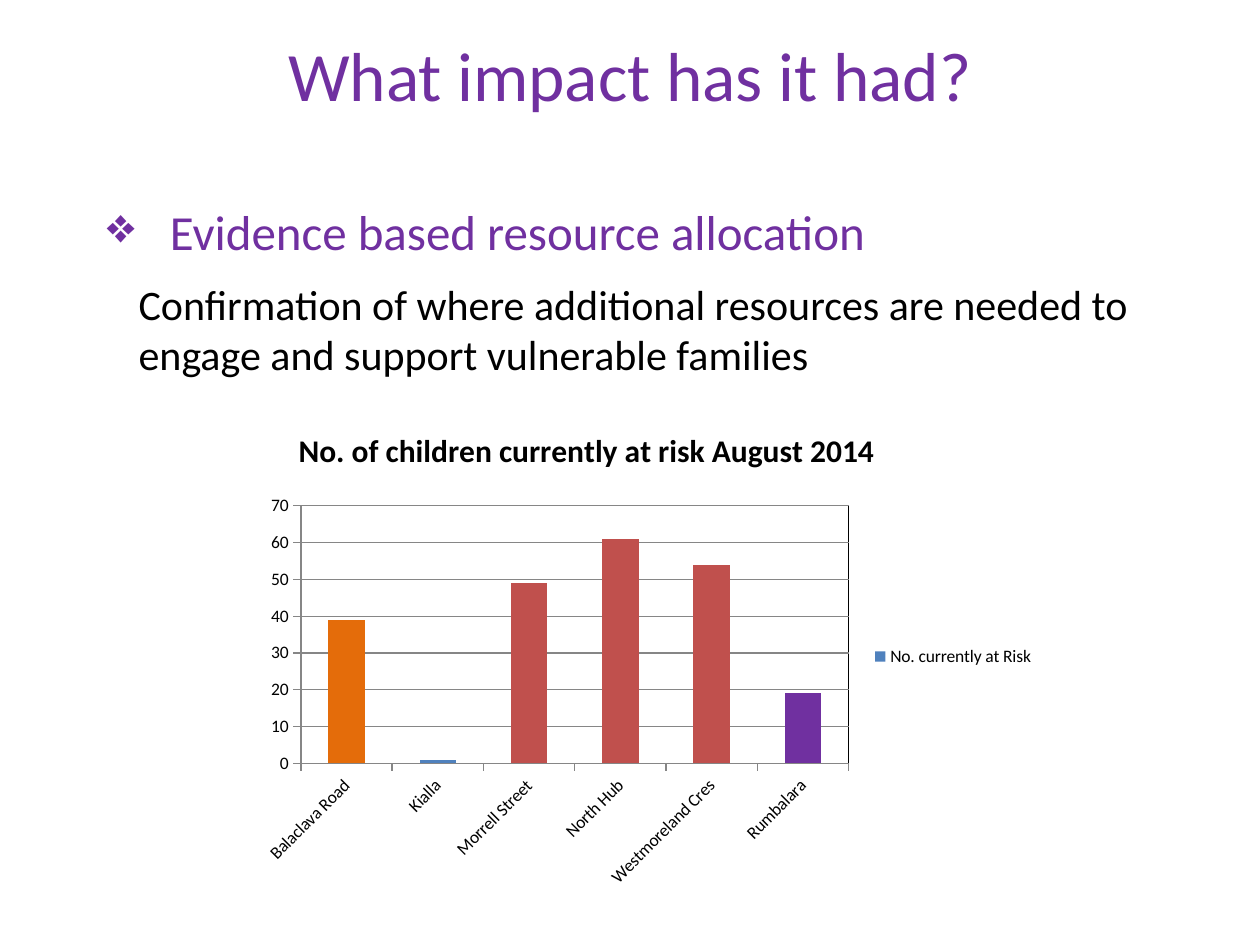
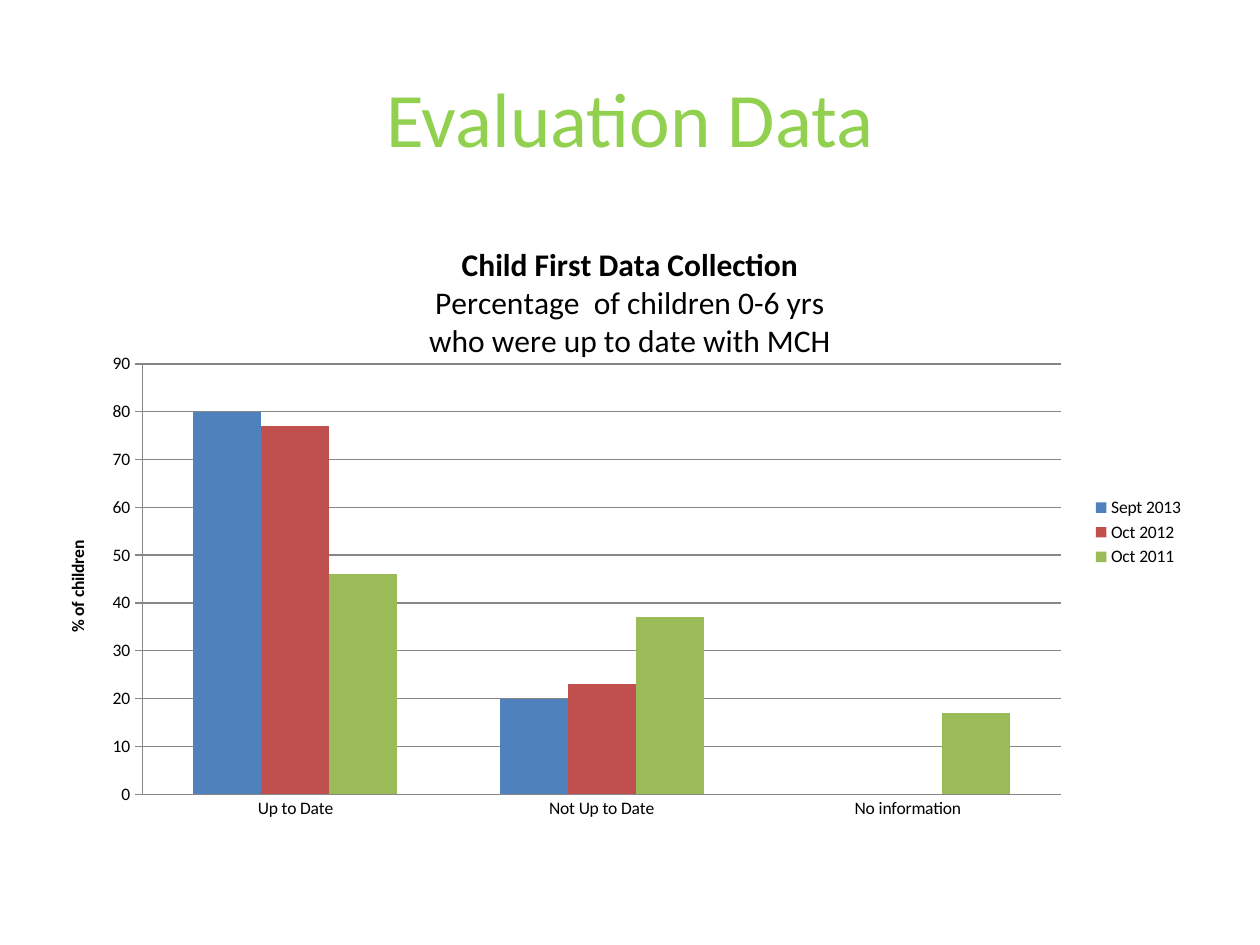
from lxml.etree import SubElement
from pptx import Presentation
from pptx.chart.data import CategoryChartData
from pptx.dml.color import RGBColor
from pptx.enum.chart import XL_CHART_TYPE, XL_LEGEND_POSITION, XL_TICK_MARK
from pptx.enum.text import MSO_ANCHOR, MSO_AUTO_SIZE, PP_ALIGN
from pptx.oxml import parse_xml
from pptx.oxml.ns import nsdecls, qn
from pptx.util import Pt

FONT = "Calibri"
BLACK = RGBColor(0x00, 0x00, 0x00)
PURPLE = RGBColor(0x70, 0x30, 0xA0)
LIME = RGBColor(0x92, 0xD0, 0x50)
ORANGE = RGBColor(0xE4, 0x6C, 0x0A)
BLUE = RGBColor(0x4F, 0x81, 0xBD)
RED = RGBColor(0xC0, 0x50, 0x4D)
GREEN = RGBColor(0x9B, 0xBB, 0x59)
GREY = RGBColor(0x86, 0x86, 0x86)
TITLE_ONLY, TITLE_BODY = 5, 1


class Deck:
    """Holds the shared style and the slide being built."""

    def __init__(self):
        self.prs = Presentation()
        self.prs.slide_width, self.prs.slide_height = Pt(720), Pt(540)
        self.slide = None

    def place(self, sp, box):
        sp.left, sp.top, sp.width, sp.height = map(Pt, box)

    def style(self, font, size, color=BLACK, bold=False):
        font.name, font.size, font.bold = FONT, Pt(size), bold
        font.color.rgb = color

    def put_text(self, tf, text, size, color=BLACK, bold_first=False):
        tf.text = text
        for i, p in enumerate(tf.paragraphs):
            for r in p.runs:
                self.style(r.font, size, color, bold_first and i == 0)

    def add_slide(self, layout, title, size, color, bottom=3.6):
        self.slide = self.prs.slides.add_slide(self.prs.slide_layouts[layout])
        sp = self.slide.shapes.title
        self.place(sp, (36, 21.6, 648, 90))
        tf = sp.text_frame
        self.put_text(tf, title, size, color)
        tf.vertical_anchor = MSO_ANCHOR.MIDDLE
        tf.margin_bottom = Pt(bottom)
        tf.paragraphs[0].alignment = PP_ALIGN.CENTER

    def body(self, text, box):
        sp = self.slide.placeholders[1]
        self.place(sp, box)
        self.put_text(sp.text_frame, text, 24)
        pPr = sp.text_frame.paragraphs[0]._p.get_or_add_pPr()
        pPr.set("marL", "0")
        pPr.set("indent", "0")
        SubElement(pPr, qn("a:buNone"))

    def bullet(self, text, box):
        sp = self.slide.shapes.add_textbox(*map(Pt, box))
        tf = sp.text_frame
        tf.word_wrap = True
        tf.auto_size = MSO_AUTO_SIZE.SHAPE_TO_FIT_TEXT
        self.put_text(tf, text, 28, PURPLE)
        pPr = tf.paragraphs[0]._p.get_or_add_pPr()
        pPr.set("marL", str(Pt(36)))
        pPr.set("indent", str(-Pt(36)))
        SubElement(pPr, qn("a:buChar")).set("char", "❖")

    def layout(self, parent, index, **values):
        for old in parent.findall(qn("c:layout")):
            parent.remove(old)
        layout = parse_xml(f"<c:layout {nsdecls('c')}><c:manualLayout/></c:layout>")
        for tag, val in values.items():
            SubElement(layout[0], qn(f"c:{tag}")).set("val", str(val))
        parent.insert(index, layout)

    def axis(self, axis, tick):
        axis.major_tick_mark, axis.minor_tick_mark = tick, XL_TICK_MARK.NONE
        self.line(axis.format.line)
        self.style(axis.tick_labels.font, 10)

    def line(self, line):
        line.color.rgb, line.width = GREY, Pt(0.75)

    def chart(self, box, title, cats, series, top, plot, cat_tick):
        data = CategoryChartData()
        data.categories = cats
        for name, vals, _ in series:
            data.add_series(name, vals)
        frame = self.slide.shapes.add_chart(
            XL_CHART_TYPE.COLUMN_CLUSTERED, *map(Pt, box), data)
        chart = frame.chart
        self.style(chart.font, 10)
        chart.has_title = True
        self.put_text(chart.chart_title.text_frame, title, 18, bold_first=True)
        chart.has_legend = True
        chart.legend.position = XL_LEGEND_POSITION.RIGHT
        chart.legend.include_in_layout = False
        self.style(chart.legend.font, 10)
        self.axis(chart.category_axis, cat_tick)
        value = chart.value_axis
        self.axis(value, XL_TICK_MARK.OUTSIDE)
        value.minimum_scale, value.maximum_scale, value.major_unit = 0, top, 10
        value.has_major_gridlines = True
        self.line(value.major_gridlines.format.line)
        bars = chart.plots[0]
        bars.gap_width, bars.vary_by_categories = 150, False
        for ser, (_, _, color) in zip(bars.series, series):
            self.fill(ser, color)
        x, y, w, h = plot
        self.layout(self.plot_area(chart), 0, layoutTarget="inner", xMode="edge",
                    yMode="edge", x=x, y=y, w=w, h=h)
        return chart

    def plot_area(self, chart):
        return chart._chartSpace.find(f".//{qn('c:plotArea')}")

    def fill(self, item, color):
        item.format.fill.solid()
        item.format.fill.fore_color.rgb = color

    def frame_plot(self, chart):
        self.plot_area(chart).append(parse_xml(
            f"<c:spPr {nsdecls('c', 'a')}><a:noFill/><a:ln w='{Pt(0.75)}'><a:solidFill>"
            f"<a:srgbClr val='{BLACK}'/></a:solidFill></a:ln></c:spPr>"))


def impact_slide(deck):
    deck.add_slide(TITLE_BODY, "What impact has it had?", 39.6, PURPLE, bottom=52)
    deck.body("Confirmation of where additional resources are needed to engage "
              "and support vulnerable families", (72, 155.5, 648, 356.4))
    deck.bullet("Evidence based resource allocation", (54, 111.6, 566.6, 41))
    cats = ["Balaclava Road", "Kialla", "Morrell Street", "North Hub",
            "Westmoreland Cres", "Rumbalara"]
    chart = deck.chart(
        (144.7, 236.2, 453.6, 277.9), "No. of children currently at risk August 2014",
        cats, [("No. currently at Risk", (39, 1, 49, 61, 54, 19), BLUE)],
        70, (0.06, 0.19, 0.69, 0.53), XL_TICK_MARK.OUTSIDE)
    deck.layout(chart.chart_title._element, 1, xMode="edge", yMode="edge", x=0.05, y=0.02)
    deck.frame_plot(chart)
    labels = chart.category_axis._element.find(qn("c:txPr"))
    labels.find(qn("a:bodyPr")).set("rot", "-2700000")
    bars = chart.plots[0].series[0]
    for i, color in {0: ORANGE, 2: RED, 3: RED, 4: RED, 5: PURPLE}.items():
        deck.fill(bars.points[i], color)


def evaluation_slide(deck):
    deck.add_slide(TITLE_ONLY, "Evaluation Data", 44, LIME)
    chart = deck.chart(
        (36, 126, 648, 356.4),
        "Child First Data Collection\nPercentage  of children 0-6 yrs\n"
        "who were up to date with MCH",
        ["Up to Date", "Not Up to Date", "No information"],
        [("Sept 2013", (80, 20, None), BLUE),
         ("Oct 2012", (77, 23, None), RED),
         ("Oct 2011", (46, 37, 17), GREEN)],
        90, (0.07, 0.23, 0.81, 0.69), XL_TICK_MARK.NONE)
    deck.put_text(chart.value_axis.axis_title.text_frame, "% of children", 10,
                  bold_first=True)


def main():
    deck = Deck()
    impact_slide(deck)
    evaluation_slide(deck)
    deck.prs.save("out.pptx")


if __name__ == "__main__":
    main()
